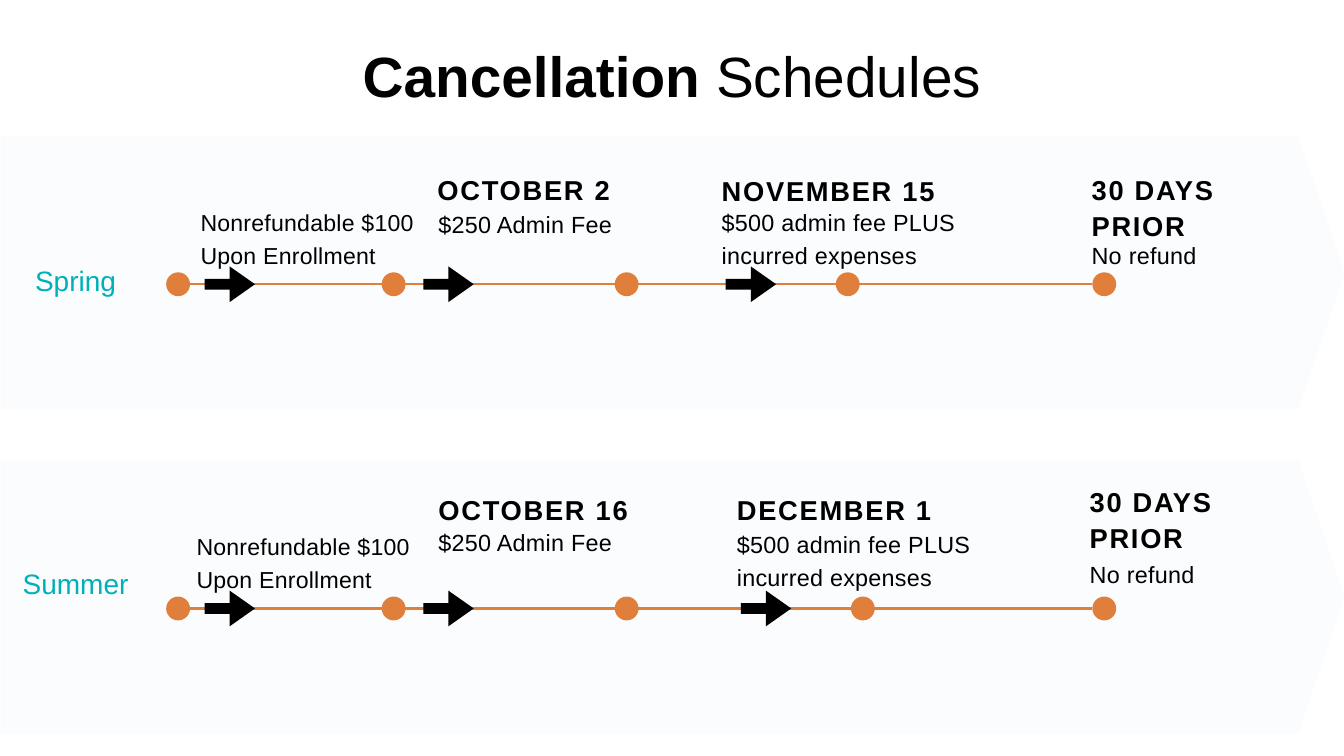
from lxml import etree
from pptx import Presentation, util as u
from pptx.dml.color import RGBColor
from pptx.enum import shapes, text
from pptx.oxml.ns import qn

COLORS = {"band": "FBFCFD", "milestone": "E07E3C", "season": "00B0B9", "ink": "000000"}
COLS, ROWS = 80, 45
WIDTH, HEIGHT = u.Inches(13.33), u.Inches(7.5)
LEFT, CENTER = text.PP_ALIGN.LEFT, text.PP_ALIGN.CENTER
STYLES = {
    "title": dict(size=40.5, leading=48.8, align=CENTER, color="ink", tracking=0),
    "season": dict(size=20, leading=28, align=CENTER, color="season", tracking=0),
    "date": dict(size=19.5, leading=26, align=LEFT, color="ink", tracking=120, bold=True),
    "enroll": dict(size=16.5, leading=23.3, align=LEFT, color="ink", tracking=20),
    "fee": dict(size=16.7, leading=23.3, align=LEFT, color="ink", tracking=20),
}
AXIS, DOT, ARROW_W, ARROW_H = 8.82, 1.42, 3, 2.12
DOT_COLS = [10.6, 23.43, 37.3, 50.46, 65.73]
ARROW_COLS = [12.18, 25.2, 43.2]
ENROLLMENT = ["Nonrefundable $100", "Upon Enrollment"]
SEASONS = [
    dict(name="Spring", top=8.1, name_row=7.26, shift=0, entries=[
        ("enroll", 11.94, 4.02, 13.26, 3.72, ENROLLMENT),
        ("date", 26.04, 1.98, 14.7, 2.04, ["OCTOBER 2"]),
        ("fee", 26.1, 4.14, 14.7, 1.8, ["$250 Admin Fee"]),
        ("date", 42.96, 2.04, 14.7, 2.04, ["NOVEMBER 15"]),
        ("fee", 42.96, 4.02, 14.7, 3.72, ["$500 admin fee PLUS incurred expenses"]),
        ("date", 64.98, 1.98, 11.82, 4.2, ["30 DAYS PRIOR"]),
        ("fee", 64.98, 6, 12.54, 1.8, ["No refund"]),
    ]),
    dict(name="Summer", top=27.4, name_row=6, shift=0.9, entries=[
        ("enroll", 11.7, 4.02, 13.26, 3.72, ENROLLMENT),
        ("date", 26.1, 1.74, 14.7, 2.04, ["OCTOBER 16"]),
        ("fee", 26.1, 3.78, 14.7, 1.8, ["$250 Admin Fee"]),
        ("date", 43.86, 1.74, 14.7, 2.04, ["DECEMBER 1"]),
        ("fee", 43.86, 3.9, 14.7, 3.72, ["$500 admin fee PLUS incurred expenses"]),
        ("date", 64.86, 1.26, 11.82, 4.2, ["30 DAYS PRIOR"]),
        ("fee", 64.86, 5.7, 12.54, 1.8, ["No refund"]),
    ]),
]


def grid(*cells):
    """Turn alternating columns and rows into slide lengths."""
    units = (WIDTH / COLS, HEIGHT / ROWS)
    return [round(cell * units[i % 2]) for i, cell in enumerate(cells)]


def add_block(slide, preset, cells, color, adjustments=()):
    """Add a plain filled preset shape."""
    block = slide.shapes.add_shape(preset, *grid(*cells))
    block.shadow.inherit = False
    block.fill.solid()
    block.fill.fore_color.rgb = RGBColor.from_string(COLORS[color])
    block.line.fill.background()
    for i, value in enumerate(adjustments):
        block.adjustments[i] = value


def add_words(slide, style_name, cells, lines):
    """Add a text box whose lines are lists of (words, bold) runs."""
    style = STYLES[style_name]
    frame = slide.shapes.add_textbox(*grid(*cells)).text_frame
    margins = dict.fromkeys(["margin_left", "margin_top", "margin_right", "margin_bottom"], 0)
    for name, value in {"word_wrap": True, **margins}.items():
        setattr(frame, name, value)
    for i, runs in enumerate(lines):
        paragraph = frame.add_paragraph() if i else frame.paragraphs[0]
        paragraph.alignment = style["align"]
        paragraph.line_spacing = u.Pt(style["leading"])
        for words, bold in runs:
            run = paragraph.add_run()
            run.text = words
            for name, value in dict(name="Arial", size=u.Pt(style["size"]), bold=bold).items():
                setattr(run.font, name, value)
            run.font.color.rgb = RGBColor.from_string(COLORS[style["color"]])
            if style["tracking"]:
                run._r.get_or_add_rPr().set("spc", str(style["tracking"]))


def add_axis(slide, start, end, row):
    """Add the timeline from one column to another."""
    axis = slide.shapes.add_connector(shapes.MSO_CONNECTOR.STRAIGHT, *grid(start, row, end, row))
    axis.line.color.rgb = RGBColor.from_string(COLORS["milestone"])
    axis.line.width = u.Pt(1.5)
    etree.SubElement(axis._element.spPr, qn("a:effectLst"))


def add_season(slide, season):
    """Add one season's band, timeline, milestones and terms."""
    preset = shapes.MSO_SHAPE
    top, shift = season["top"], season["shift"]
    row = top + AXIS
    add_block(slide, preset.PENTAGON, (0.06, top, 79.98, 16.26), "band", [0.17])
    add_axis(slide, DOT_COLS[0], DOT_COLS[-1] - DOT / 2, row)
    for i, col in enumerate(DOT_COLS):
        center = col + (shift if i == 3 else 0)
        add_block(slide, preset.OVAL, (center - DOT / 2, row - DOT / 2, DOT, DOT), "milestone")
    for i, col in enumerate(ARROW_COLS):
        left = col + (shift if i == 2 else 0)
        add_block(slide, preset.RIGHT_ARROW, (left, row - ARROW_H / 2, ARROW_W, ARROW_H),
                  "ink", [0.3, 0.71])
    add_words(slide, "season", (1.08, top + season["name_row"], 6.84, 2.16),
              [[(season["name"], False)]])
    for style, col, offset, width, height, lines in season["entries"]:
        bold = STYLES[style].get("bold", False)
        add_words(slide, style, (col, top + offset, width, height),
                  [[(line, bold)] for line in lines])


def main():
    """Build the cancellation schedule slide."""
    deck = Presentation()
    deck.slide_width, deck.slide_height = WIDTH, HEIGHT
    slide = deck.slides.add_slide(deck.slide_layouts[6])
    add_words(slide, "title", (4.5, 2.4, 71, 3.9),
              [[("Cancellation ", True), ("Schedules", False)]])
    for season in SEASONS:
        add_season(slide, season)
    deck.save("out.pptx")


if __name__ == "__main__":
    main()
